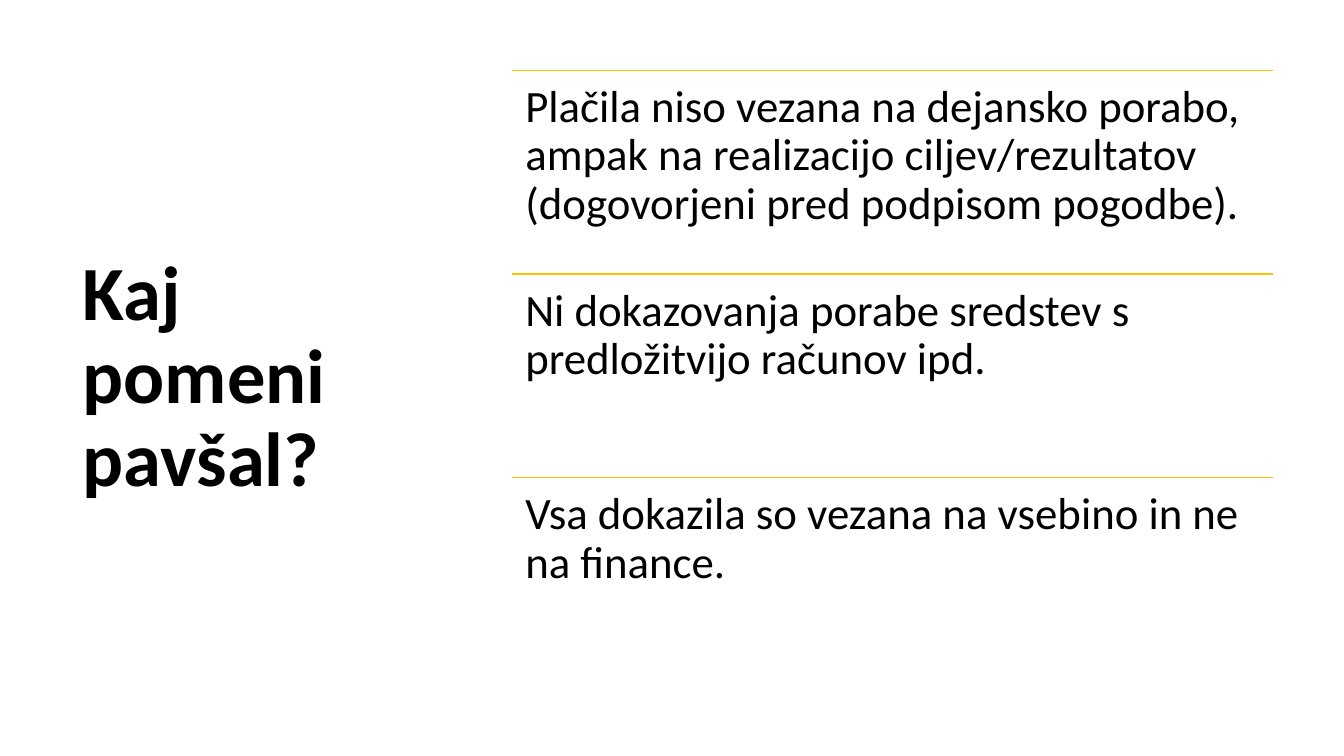
import pptx
import pptx.util
import pptx.dml.color
import pptx.enum.shapes
import pptx.enum.text
import pptx.oxml

Inches = pptx.util.Inches
Pt = pptx.util.Pt

COLORS = {"text": "000000", "rule": "FFC000"}
FONT = "Calibri"
QUESTION = "Kaj pomeni pavšal?"
ANSWERS = [
    "Plačila niso vezana na dejansko porabo, ampak na realizacijo "
    "ciljev/rezultatov (dogovorjeni pred podpisom pogodbe).",
    "Ni dokazovanja porabe sredstev s predložitvijo računov ipd.",
    "Vsa dokazila so vezana na vsebino in ne na finance.",
]


def color(name):
    return pptx.dml.color.RGBColor.from_string(COLORS[name])


def write(frame, wording, size, anchor, inset_x, inset_y, bold=False):
    """Fill a text frame with one left-aligned paragraph."""
    frame.word_wrap = True
    frame.auto_size = pptx.enum.text.MSO_AUTO_SIZE.NONE
    frame.vertical_anchor = anchor
    frame.margin_left = frame.margin_right = Inches(inset_x)
    frame.margin_top = frame.margin_bottom = Inches(inset_y)
    paragraph = frame.paragraphs[0]
    paragraph.alignment = pptx.enum.text.PP_ALIGN.LEFT
    paragraph.line_spacing = 0.9
    run = paragraph.add_run()
    run.text = wording
    run.font.name = FONT
    run.font.size = Pt(size)
    run.font.bold = bold
    run.font.color.rgb = color("text")


def add_question(slide, left, top, width, height):
    question = slide.shapes.title
    question.left, question.top = Inches(left), Inches(top)
    question.width, question.height = Inches(width), Inches(height)
    write(question.text_frame, QUESTION, 54.7,
          pptx.enum.text.MSO_ANCHOR.MIDDLE, 0.13, 0.07, bold=True)


def add_rule(slide, left, top, width):
    rule = slide.shapes.add_connector(
        pptx.enum.shapes.MSO_CONNECTOR.STRAIGHT,
        Inches(left), Inches(top), Inches(left + width), Inches(top))
    rule.line.color.rgb = color("rule")
    rule.line.width = Pt(1)
    rule._element.spPr.append(pptx.oxml.parse_xml(
        '<a:effectLst xmlns:a="http://schemas.openxmlformats.org/drawingml/2006/main"/>'))


def add_answers(slide, left, top, width, height):
    """Stack the answers in equal rows, each under a rule."""
    row_height = height / len(ANSWERS)
    for index, wording in enumerate(ANSWERS):
        row_top = top + index * row_height
        add_rule(slide, left, row_top, width)
        answer = slide.shapes.add_textbox(
            Inches(left), Inches(row_top), Inches(width), Inches(row_height))
        write(answer.text_frame, wording, 32,
              pptx.enum.text.MSO_ANCHOR.TOP, 0.13, 0.13)


def main():
    deck = pptx.Presentation()
    deck.slide_width, deck.slide_height = Inches(13.33), Inches(7.5)
    slide = deck.slides.add_slide(deck.slide_layouts.get_by_name("Title Only"))
    add_question(slide, 0.69, 0.7, 3.74, 6.11)
    add_answers(slide, 5.08, 0.7, 7.55, 6.06)
    deck.save("out.pptx")


if __name__ == "__main__":
    main()
